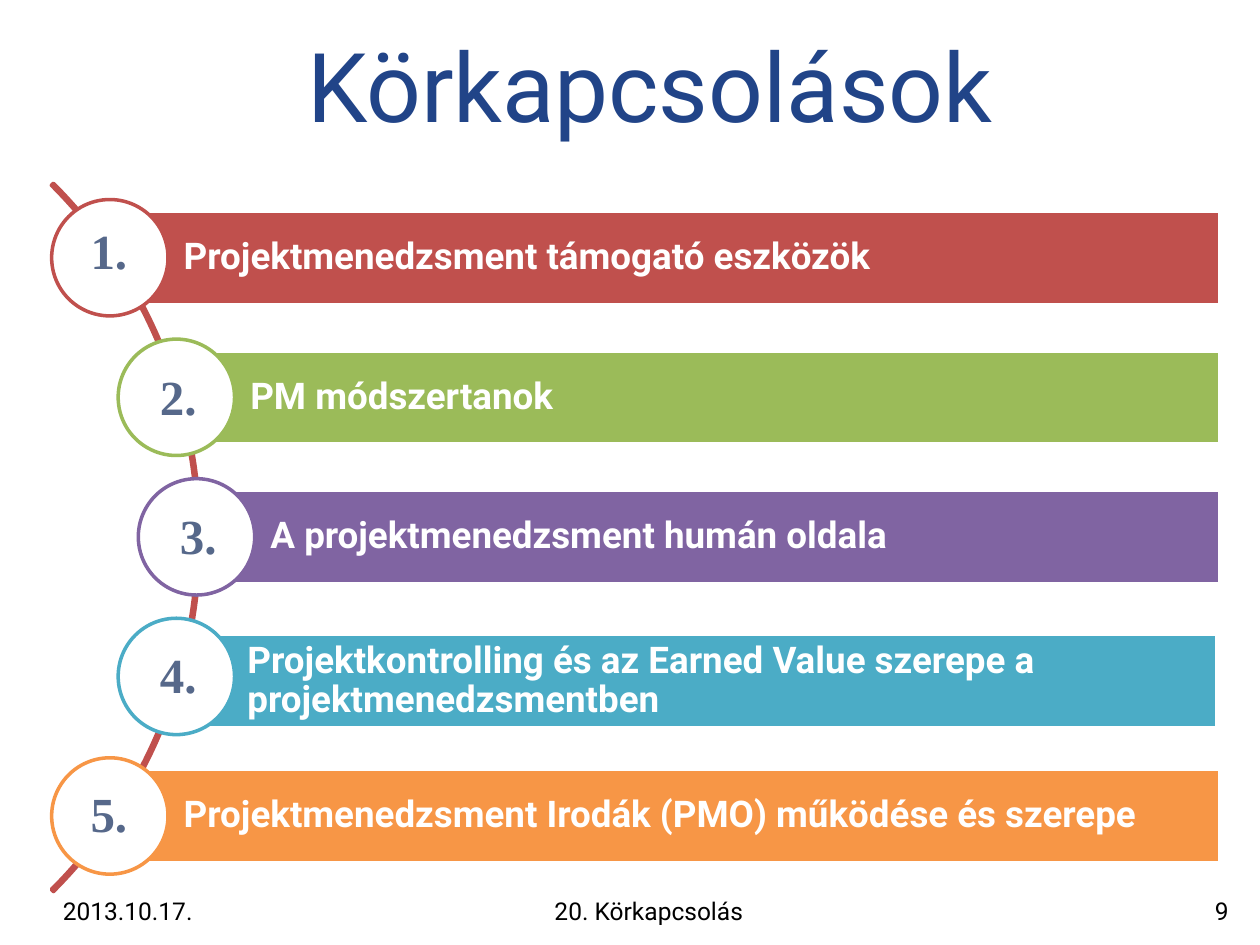
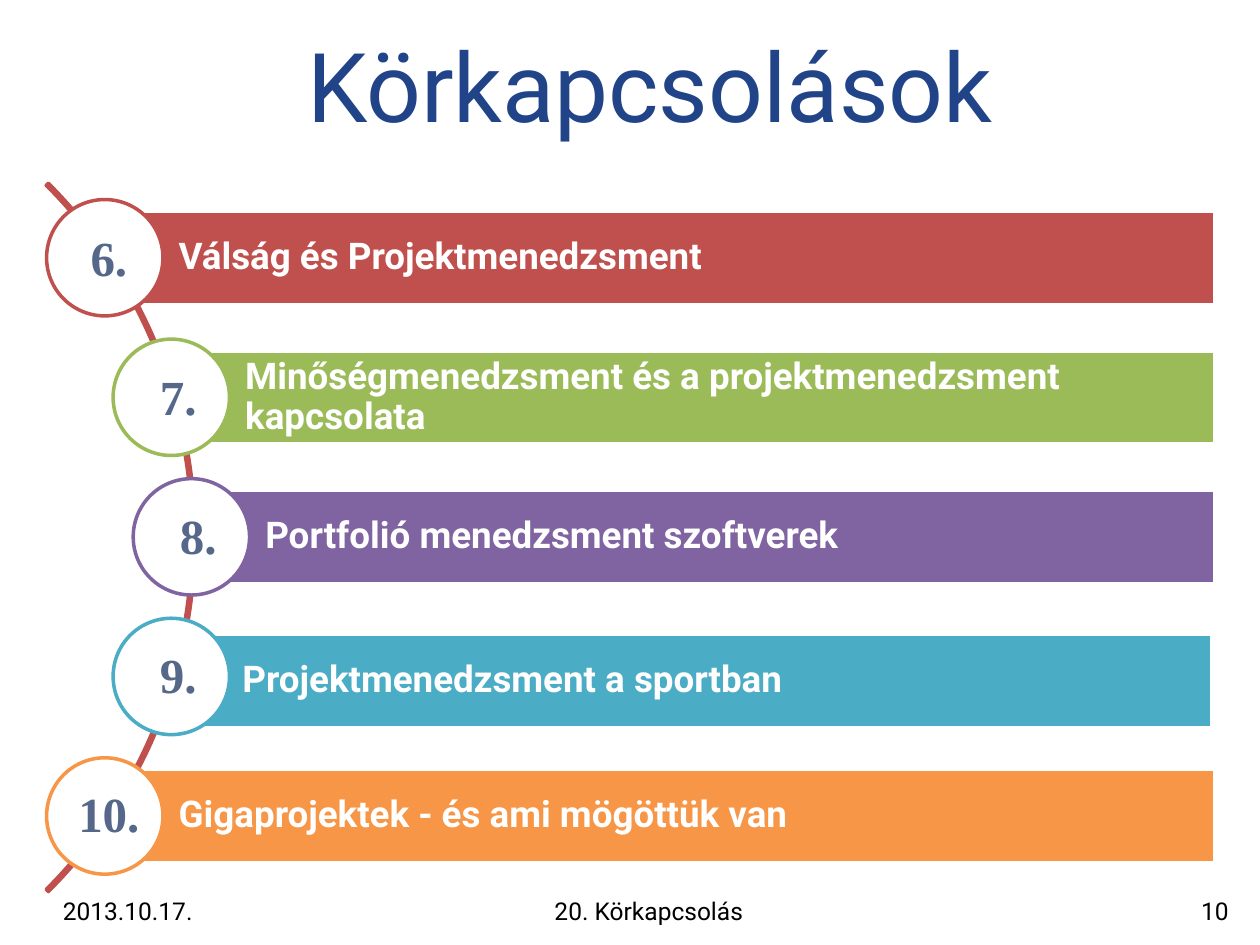
from pptx import Presentation
from pptx.dml.color import RGBColor
from pptx.enum.shapes import MSO_SHAPE
from pptx.enum.text import MSO_ANCHOR, PP_ALIGN
from pptx.util import Pt

ARC, RECT, OVAL = MSO_SHAPE.BLOCK_ARC, MSO_SHAPE.RECTANGLE, MSO_SHAPE.OVAL
LEFT, CENTER, RIGHT = PP_ALIGN.LEFT, PP_ALIGN.CENTER, PP_ALIGN.RIGHT
TOP, MIDDLE = MSO_ANCHOR.TOP, MSO_ANCHOR.MIDDLE

WHITE, BLACK, TITLE_BLUE, NUMBER_BLUE = "FFFFFF", "000000", "214488", "56688A"
ROW_COLORS = ["C0504D", "9BBB59", "8064A2", "4BACC6", "F79646"]
SANS, SERIF = "Roboto", "Times New Roman"

# Row geometry
BAR_LEFTS = [62.8, 100.8, 112.3, 100.8, 62.8]
NUMBER_LEFTS = [36.7, 76.3, 87.8, 76.3, 36.7]
BAR_NUDGES = [(0, 0), (0, 0), (0, 0), (-1.6, 2.6), (0, 0)]
FIRST_CENTER, ROW_PITCH = 147.3, 79.75
BAR_RIGHT, BAR_HEIGHT, CIRCLE = 697, 53.2, 66.5
FIRST_NUMBER_TOP, NUMBER_PITCH = 126.6, 79.4
ARC_SIZE = 572.4

# Shift of the diagram, top of the first number, first number, topics
SLIDES = [
    (0, 122.4, 1, [
        "Projektmenedzsment támogató eszközök",
        "PM módszertanok",
        "A projektmenedzsment humán oldala",
        "Projektkontrolling és az Earned Value szerepe a projektmenedzsmentben",
        "Projektmenedzsment Irodák (PMO) működése és szerepe",
    ]),
    (-2.9, FIRST_NUMBER_TOP, 6, [
        "Válság és Projektmenedzsment",
        "Minőségmenedzsment és a projektmenedzsment kapcsolata",
        "Portfolió menedzsment szoftverek",
        "Projektmenedzsment a sportban",
        "Gigaprojektek - és ami mögöttük van",
    ]),
]


def add_shape(s, kind, x, y, w, h, fill, line):
    sp = s.shapes.add_shape(kind, Pt(x), Pt(y), Pt(w), Pt(h))
    sp.shadow.inherit = False
    if fill:
        sp.fill.solid()
        sp.fill.fore_color.rgb = RGBColor.from_string(fill)
    else:
        sp.fill.background()
    sp.line.color.rgb = RGBColor.from_string(line)
    sp.line.width = Pt(2)
    return sp


def write(sp, text, size, color, font=SANS, bold=False, align=LEFT, anchor=TOP):
    tf = sp.text_frame
    tf.word_wrap = True
    tf.vertical_anchor = anchor
    p = tf.paragraphs[0]
    p.alignment = align
    r = p.add_run()
    r.text = text
    r.font.size, r.font.name, r.font.bold = Pt(size), font, bold
    r.font.color.rgb = RGBColor.from_string(color)
    return tf


prs = Presentation()
prs.slide_width, prs.slide_height = Pt(720), Pt(540)

for page, (shift, first_top, first_number, topics) in enumerate(SLIDES, 9):
    s = prs.slides.add_slide(prs.slide_layouts[6])
    title = s.shapes.add_textbox(Pt(168.5), Pt(11.5), Pt(540), Pt(73.4))
    write(title, "Körkapcsolások", 55, TITLE_BLUE, anchor=MIDDLE)

    arc = add_shape(s, ARC, shift - 458, 20.9, ARC_SIZE, ARC_SIZE, None, ROW_COLORS[0])
    for i, value in enumerate([189, 27, 0.003]):
        arc.adjustments[i] = value

    for i, (topic, color, left, (dx, dy)) in enumerate(
            zip(topics, ROW_COLORS, BAR_LEFTS, BAR_NUDGES)):
        center = FIRST_CENTER + i * ROW_PITCH
        bar = add_shape(s, RECT, left + shift + dx, center - BAR_HEIGHT / 2 + dy,
                        BAR_RIGHT - left, BAR_HEIGHT, color, WHITE)
        tf = write(bar, topic, 21, WHITE, bold=True, anchor=MIDDLE)
        tf.margin_left = Pt(42.2)
        tf.margin_top = tf.margin_right = tf.margin_bottom = Pt(4.2)
        tf.paragraphs[0].line_spacing = 0.9
        add_shape(s, OVAL, left + shift - CIRCLE / 2, center - CIRCLE / 2,
                  CIRCLE, CIRCLE, WHITE, color)

    for i, left in enumerate(NUMBER_LEFTS):
        top = FIRST_NUMBER_TOP + i * NUMBER_PITCH if i else first_top
        number = s.shapes.add_textbox(Pt(left), Pt(top), Pt(51), Pt(41))
        write(number, f"{first_number + i}.", 28, NUMBER_BLUE, SERIF, True, CENTER)

    for x, w, text, align in [(28.8, 134, "2013.10.17.", LEFT),
                              (168.5, 404.6, "20. Körkapcsolás", CENTER),
                              (579.6, 129.6, str(page), RIGHT)]:
        footer = s.shapes.add_textbox(Pt(x), Pt(508.3), Pt(w), Pt(21))
        write(footer, text, 14, BLACK, align=align)

prs.save("out.pptx")
